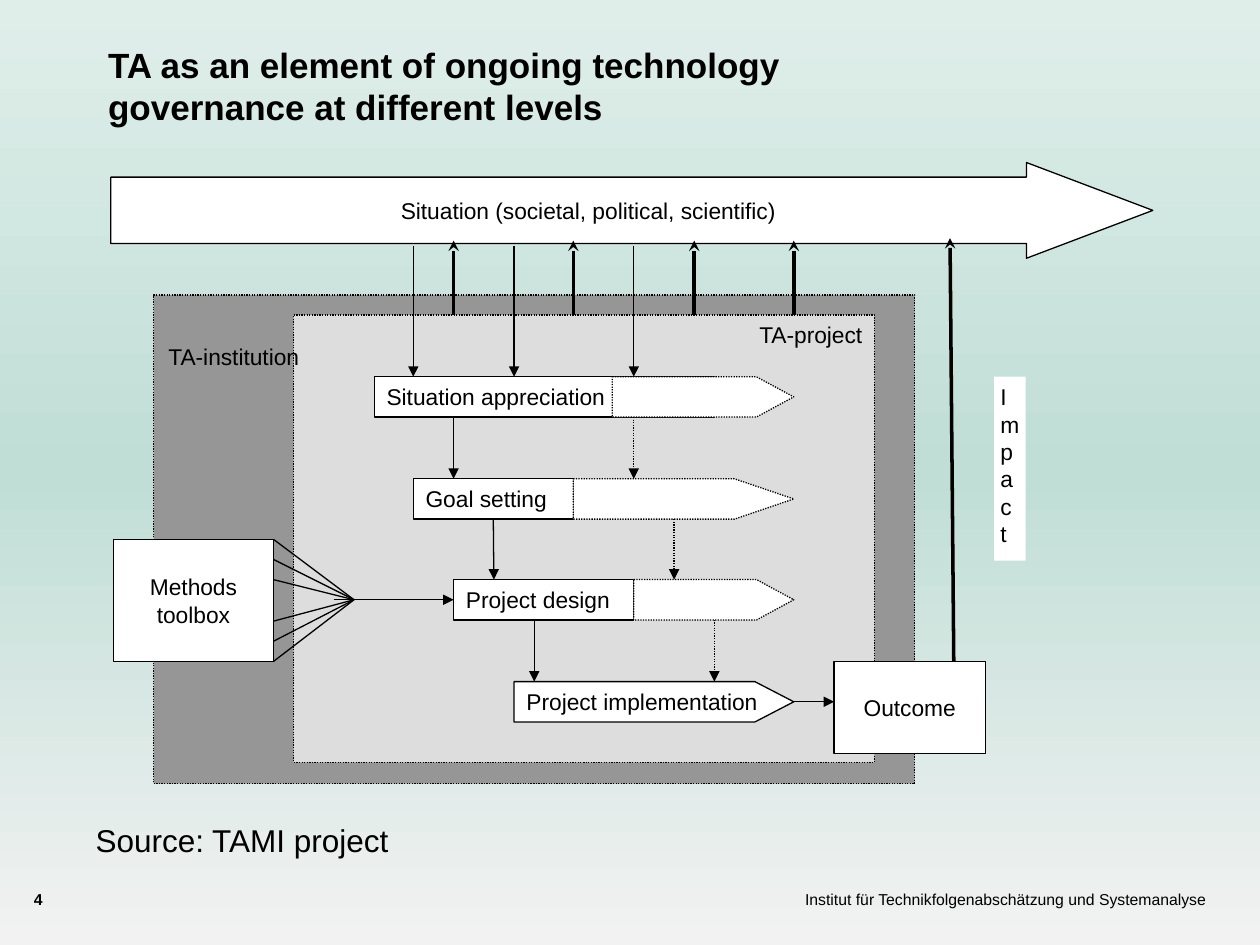
import copy

import lxml.etree
import pptx
import pptx.dml.color
import pptx.enum.dml
import pptx.enum.shapes
import pptx.enum.text
import pptx.oxml.ns
import pptx.util

Inches = pptx.util.Inches
Pt = pptx.util.Pt
Kind = pptx.enum.shapes.MSO_SHAPE
Align = pptx.enum.text.PP_ALIGN
Anchor = pptx.enum.text.MSO_ANCHOR
qn = pptx.oxml.ns.qn


def tint(code):
    return pptx.dml.color.RGBColor.from_string(code)


def write(shape, text, size=13, bold=False, align=Align.LEFT, anchor=Anchor.TOP,
          pad=(0.1, 0.05), font="Arial", ink="000000"):
    frame = shape.text_frame
    frame.word_wrap = True
    frame.vertical_anchor = anchor
    frame.margin_left = frame.margin_right = Inches(pad[0])
    frame.margin_top = frame.margin_bottom = Inches(pad[1])
    frame.text = text
    for para in frame.paragraphs:
        para.alignment = align
        para.font.name = font
        para.font.size = Pt(size)
        para.font.bold = bold
        para.font.color.rgb = tint(ink)


class Canvas:
    ink = "000000"
    paper = "FFFFFF"
    thin = 0.75
    thick = 2

    def __init__(self, deck):
        self.slide = deck.slides.add_slide(deck.slide_layouts[6])

    def shade(self, low, mid, high):
        fill = self.slide.background.fill
        fill.gradient()
        fill.gradient_angle = 90
        first = self.slide.element.find(".//" + qn("a:gs"))
        first.addnext(copy.deepcopy(first))
        for stop, code, place in zip(fill.gradient_stops, (low, mid, high), (0, 0.5, 1)):
            stop.color.rgb = tint(code)
            stop.position = place

    def stroke(self, line, width, dots):
        line.color.rgb = tint(self.ink)
        line.width = Pt(width)
        if dots:
            line.dash_style = pptx.enum.dml.MSO_LINE.ROUND_DOT

    def box(self, left, top, width, height, kind=Kind.RECTANGLE, fill=paper,
            dots=False, edge=True, tweaks=()):
        shape = self.slide.shapes.add_shape(
            kind, Inches(left), Inches(top), Inches(width), Inches(height))
        shape.shadow.inherit = False
        shape.fill.solid()
        shape.fill.fore_color.rgb = tint(fill)
        if edge:
            self.stroke(shape.line, self.thin, dots)
        else:
            shape.line.fill.background()
        for spot, value in enumerate(tweaks):
            shape.adjustments[spot] = value
        return shape

    def label(self, left, top, width, height, text, **style):
        shape = self.slide.shapes.add_textbox(
            Inches(left), Inches(top), Inches(width), Inches(height))
        write(shape, text, **style)

    def line(self, start, end, width=thin, dots=False, tip=None):
        link = self.slide.shapes.add_connector(
            pptx.enum.shapes.MSO_CONNECTOR.STRAIGHT,
            *(Inches(value) for value in (*start, *end)))
        self.stroke(link.line, width, dots)
        props = link.element.spPr
        if tip:
            lxml.etree.SubElement(props.find(qn("a:ln")), qn("a:tailEnd"), type=tip)
        lxml.etree.SubElement(props, qn("a:effectLst"))
        return link


def main():
    deck = pptx.Presentation()
    deck.slide_width = Inches(10)
    deck.slide_height = Inches(7.5)
    page = Canvas(deck)
    page.shade("F2F2F2", "C0DED6", "E0EEEA")
    mid = {"align": Align.CENTER, "anchor": Anchor.MIDDLE}

    page.label(5.94, 7.06, 3.63, 0.39,
               "Institut für Technikfolgenabschätzung und Systemanalyse",
               size=9, align=Align.RIGHT, pad=(0, 0))
    page.label(0.27, 7.06, 0.36, 0.24, "4", size=9, bold=True, pad=(0, 0))
    page.label(0.76, 0.3, 5.67, 0.77,
               "TA as an element of ongoing technology governance at different levels",
               size=20, bold=True)
    page.label(0.66, 6.47, 3.91, 0.4, "Source: TAMI project", size=18)

    page.box(1.22, 2.34, 6.04, 3.88, fill="969696", dots=True)
    page.box(2.33, 2.5, 4.61, 3.55, fill="DDDDDD", dots=True)
    page.label(1.22, 2.67, 1.27, 0.81, "TA-institution", align=Align.CENTER)
    page.label(5.82, 2.5, 1.23, 0.48, "TA-project", align=Align.CENTER)

    write(page.box(0.88, 1.29, 8.27, 0.76, Kind.RIGHT_ARROW, tweaks=(0.694, 1.32)),
          "Situation (societal, political, scientific)", **mid)
    write(page.box(0.9, 4.28, 1.27, 0.97), "Methods toolbox", **mid)
    write(page.box(6.62, 5.25, 1.2, 0.73), "Outcome", **mid)
    write(page.box(7.89, 2.99, 0.25, 1.46, edge=False), "\n".join("Impact"), pad=(0.05, 0.05))

    high = 0.32
    right = 6.3
    rows = [2.99, 3.8, 4.6, 5.41]
    steps = [
        ("Situation appreciation", 2.97, 2.7, 4.86, 0.927),
        ("Goal setting", 3.28, 1.27, 4.55, 1.47),
        ("Project design", 3.6, 1.43, 5.03, 0.921),
    ]
    bars = []
    for top, (text, left, width, split, point) in zip(rows, steps):
        bar = page.box(left, top, width, high)
        write(bar, text)
        page.box(split, top, right - split, high, Kind.PENTAGON, dots=True, tweaks=(point,))
        bars.append(bar)
    write(page.box(4.08, rows[3], 2.22, high, Kind.PENTAGON, tweaks=(0.965,)),
          "Project implementation")

    for x in (3.28, 4.08, 5.03):
        page.line((x, 1.95), (x, rows[0]), tip="triangle")
    for x in (3.6, 4.55, 5.51, right):
        page.line((x, 2.5), (x, 1.91), width=page.thick, tip="stealth")
    page.line((7.57, 5.25), (7.54, 1.89), width=page.thick, tip="stealth")

    downs = []
    for spot, (top, low) in enumerate(zip(rows, rows[1:])):
        for base, dots in ((3.6, False), (5.03, True)):
            x = base + high * spot
            downs.append(page.line((x, top + high), (x, low), dots=dots, tip="triangle"))
    downs[2].begin_connect(bars[1], 2)

    hub = (2.81, 4.76)
    for y in (4.28, 4.44, 4.6, 4.93, 5.09, 5.25):
        page.line((2.17, y), hub)
    page.line((2.65, 4.76), (3.6, 4.76), tip="triangle").end_connect(bars[2], 1)
    page.line((right, 5.57), (6.62, 5.57), tip="triangle")

    deck.save("out.pptx")


if __name__ == "__main__":
    main()
